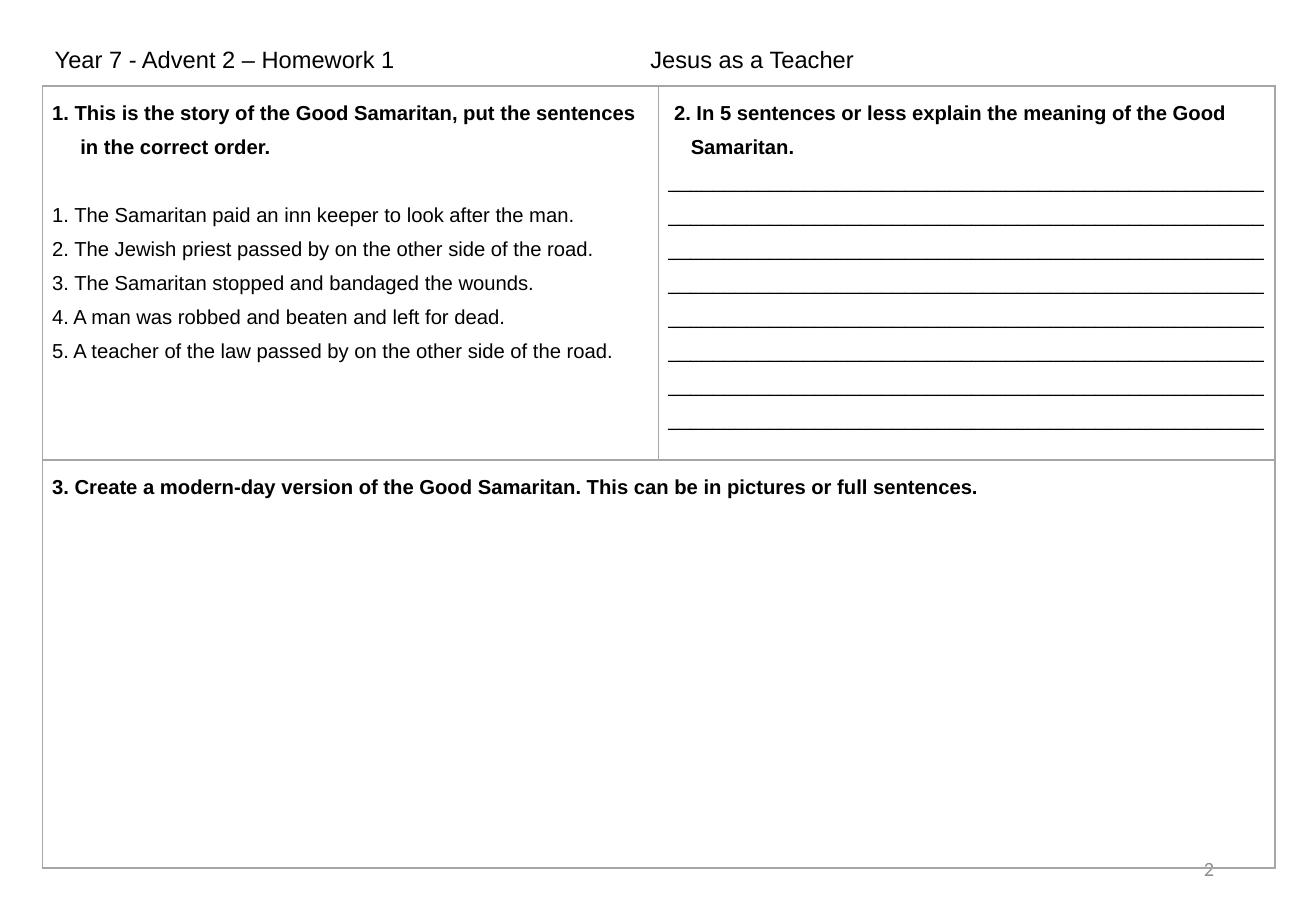
"""Build a homework worksheet slide about the Good Samaritan."""
from dataclasses import dataclass

from lxml.etree import SubElement
from pptx import Presentation
from pptx.dml.color import RGBColor
from pptx.enum.text import MSO_ANCHOR as Anchor, MSO_AUTO_SIZE as AutoSize, PP_ALIGN as Align
from pptx.oxml.ns import qn
from pptx.table import _Cell as Cell
from pptx.text.text import _Paragraph as Paragraph
from pptx.util import Cm, Pt

BLACK = RGBColor(0x00, 0x00, 0x00)
WHITE = RGBColor(0xFF, 0xFF, 0xFF)
GREY = RGBColor(0x8C, 0x8C, 0x8C)
BORDER = RGBColor(0xA6, 0xA6, 0xA6)

TABLE_LEFT = Cm(0.89)
COLUMN_WIDTH = Cm(12.88)
ROW_HEIGHTS = (Cm(7.32), Cm(8.53))
TOPIC_TAB = Cm(12.45)
ANSWER_BLANKS = 8 * 52 + 8


@dataclass(frozen=True)
class Line:
    text: str
    bold: bool = False
    indent: float = 0
    after: float = 0


@dataclass(frozen=True)
class Task:
    row: int
    column: int
    lines: tuple[Line, ...]


EVENTS = (
    "The Samaritan paid an inn keeper to look after the man.",
    "The Jewish priest passed by on the other side of the road.",
    "The Samaritan stopped and bandaged the wounds.",
    "A man was robbed and beaten and left for dead.",
    "A teacher of the law passed by on the other side of the road.",
)

TASKS = (
    Task(0, 0, (
        Line("1. This is the story of the Good Samaritan, put the sentences", bold=True),
        Line("in the correct order.", bold=True, indent=0.59, after=20),
        *(Line(f"{number}. {event}") for number, event in enumerate(EVENTS, 1)),
    )),
    Task(0, 1, (
        Line("2. In 5 sentences or less explain the meaning of the Good", bold=True, indent=0.12),
        Line("Samaritan.", bold=True, indent=0.47),
        Line("_" * ANSWER_BLANKS),
    )),
    Task(1, 0, (
        Line("3. Create a modern-day version of the Good Samaritan. "
             "This can be in pictures or full sentences.", bold=True),
    )),
)


def style(para: Paragraph, size: float, color: RGBColor = BLACK,
          font: str = "Arial", bold: bool = False) -> None:
    for span in para.runs:
        span.font.name = font
        span.font.size = Pt(size)
        span.font.bold = bold
        span.font.color.rgb = color


def draw_borders(cell: Cell) -> None:
    properties = cell._tc.get_or_add_tcPr()
    for side in ("a:lnL", "a:lnR", "a:lnT", "a:lnB"):
        line = SubElement(properties, qn(side), w=str(Pt(1)))
        fill = SubElement(line, qn("a:solidFill"))
        SubElement(fill, qn("a:srgbClr"), val=str(BORDER))


def write_task(cell: Cell, lines: tuple[Line, ...]) -> None:
    frame = cell.text_frame
    frame.text = "\n".join(line.text for line in lines)
    for para, line in zip(frame.paragraphs, lines):
        para.line_spacing = 1.5
        para.space_after = Pt(line.after)
        para._p.get_or_add_pPr().set("marL", str(Cm(line.indent)))
        style(para, 12, bold=line.bold)


def main() -> None:
    deck = Presentation()
    deck.slide_width, deck.slide_height = Cm(27.51), Cm(19.05)
    page = deck.slides.add_slide(deck.slide_layouts[5])

    number = page.shapes.add_textbox(Cm(19.43), Cm(17.65), Cm(6.2), Cm(1.02))
    number.text_frame.word_wrap = True
    number.text_frame.vertical_anchor = Anchor.MIDDLE
    number.text_frame.text = "2"
    number.text_frame.paragraphs[0].alignment = Align.RIGHT
    style(number.text_frame.paragraphs[0], 12, GREY, "Calibri")

    table = page.shapes.add_table(
        2, 2, TABLE_LEFT, Cm(1.8), 2 * COLUMN_WIDTH, sum(ROW_HEIGHTS)).table
    table.first_row = table.horz_banding = False
    for column in table.columns:
        column.width = COLUMN_WIDTH
    for row, height in zip(table.rows, ROW_HEIGHTS):
        row.height = height
    for cell in table.iter_cells():
        cell.margin_left = cell.margin_right = Cm(0.2)
        cell.margin_top = cell.margin_bottom = Cm(0.1)
        draw_borders(cell)
        cell.fill.background()
    table.cell(1, 0).merge(table.cell(1, 1))
    for task in TASKS:
        write_task(table.cell(task.row, task.column), task.lines)

    title = page.shapes.title
    title.left, title.top, title.width, title.height = TABLE_LEFT, Cm(0.51), Cm(26.31), Cm(1.17)
    title.fill.solid()
    title.fill.fore_color.rgb = WHITE
    title.text_frame.auto_size = AutoSize.NONE
    title.text_frame.vertical_anchor = Anchor.MIDDLE
    title.text_frame.text = "Year 7 - Advent 2 – Homework 1\tJesus as a Teacher"
    heading = title.text_frame.paragraphs[0]
    heading.alignment = Align.LEFT
    heading.line_spacing = 1.5
    tabs = SubElement(heading._p.get_or_add_pPr(), qn("a:tabLst"))
    SubElement(tabs, qn("a:tab"), pos=str(TOPIC_TAB), algn="l")
    style(heading, 14)

    deck.save("out.pptx")


if __name__ == "__main__":
    main()
